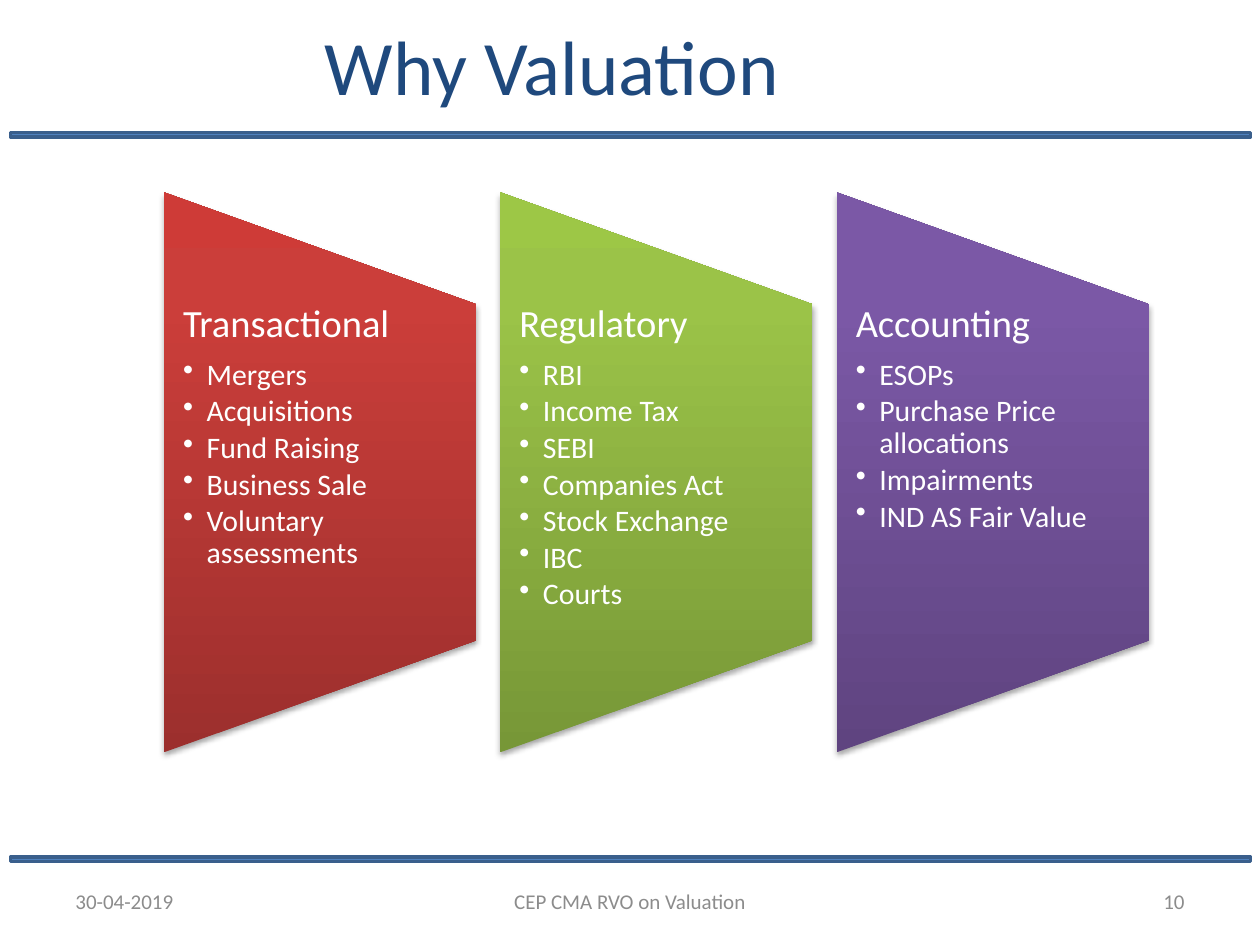
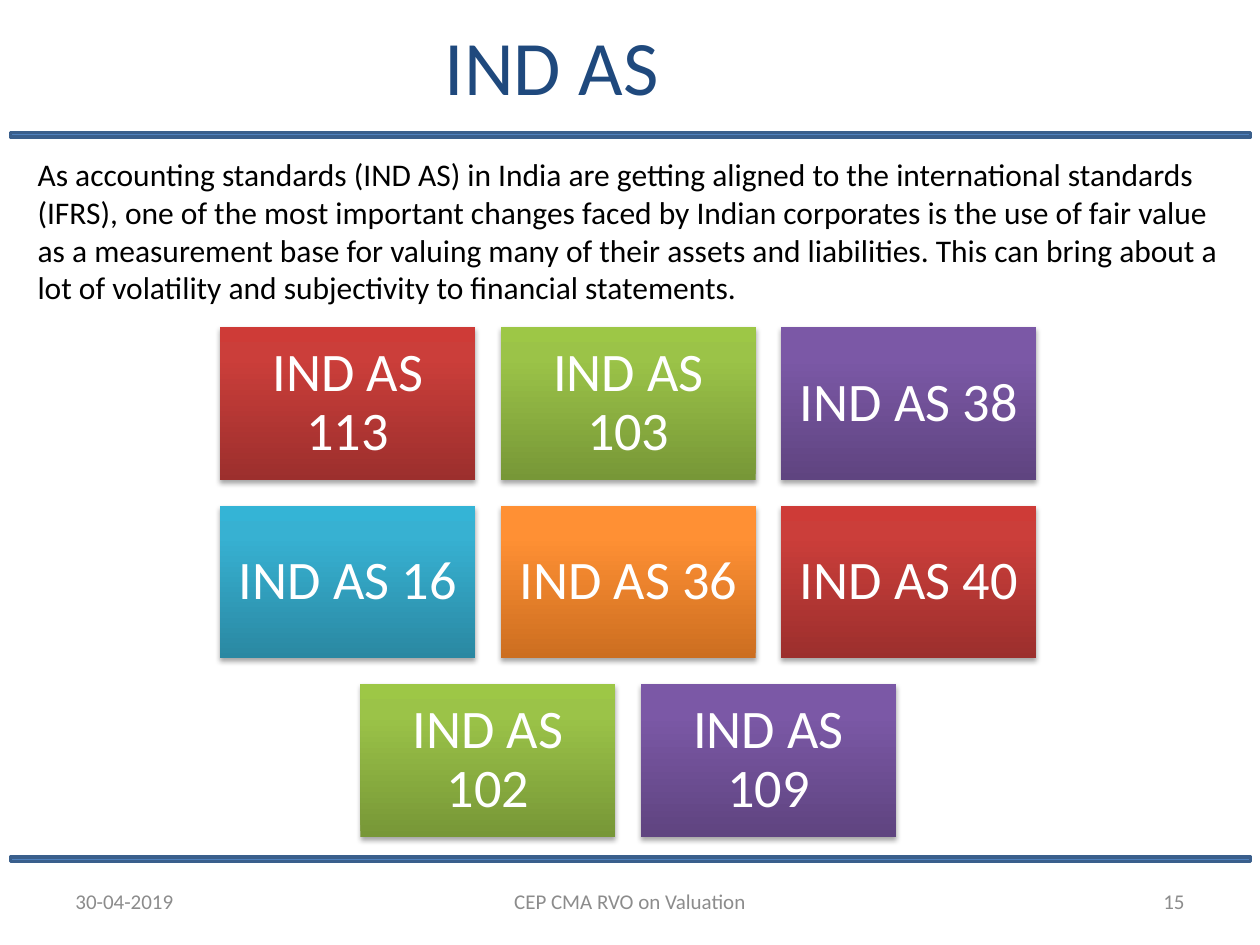
from pptx import Presentation
from pptx.dml.color import RGBColor
from pptx.enum import shapes, text
from pptx.oxml import parse_xml
from pptx.oxml.ns import nsdecls, qn
from pptx.util import Pt

# Shared look
FONT = "Calibri"
COLOURS = {"title": "1F497D", "band": "4F81BD", "band_edge": "3A5F8C",
           "footer": "8C8C8C", "body": "000000", "light": "FFFFFF"}
GRADIENTS = {  # bottom, 80 % of the way up, top
    "red": ("9C2F2D", "CB3E3A", "CE3B37"),
    "green": ("779737", "9BC348", "9DC746"),
    "purple": ("5F4480", "7B58A6", "7C57A8"),
    "teal": ("2A88A2", "37B1D2", "34B4D6"),
    "orange": ("CC6E20", "FF9034", "FF9136"),
}
LEFT, CENTRE, RIGHT = (text.PP_ALIGN.LEFT, text.PP_ALIGN.CENTER,
                       text.PP_ALIGN.RIGHT)
MIDDLE = text.MSO_ANCHOR.MIDDLE

# Content
REASONS = [
    ("Transactional", "red", ["Mergers", "Acquisitions", "Fund Raising",
                              "Business Sale", "Voluntary assessments"]),
    ("Regulatory", "green", ["RBI", "Income Tax", "SEBI", "Companies Act",
                             "Stock Exchange", "IBC", "Courts"]),
    ("Accounting", "purple", ["ESOPs", "Purchase Price allocations",
                              "Impairments", "IND AS Fair Value"]),
]
STANDARDS = [
    [("113", "red"), ("103", "green"), ("38", "purple")],
    [("16", "teal"), ("36", "orange"), ("40", "red")],
    [("102", "green"), ("109", "purple")],
]
INTRO = ("As accounting standards (IND AS) in India are getting aligned to "
         "the international standards (IFRS), one of the most important "
         "changes faced by Indian corporates is the use of fair value as a "
         "measurement base for valuing many of their assets and liabilities. "
         "This can bring about a lot of volatility and subjectivity to "
         "financial statements.")


def box(*lengths):
    return [Pt(length) for length in lengths]


def apply(target, formats):
    for name, value in formats.items():
        setattr(target, name, value)


def rgb(name):
    return RGBColor.from_string(COLOURS[name])


def write(paragraph, words, size, colour, **formats):
    apply(paragraph, formats)
    run = paragraph.add_run()
    run.text = words
    apply(run.font, {"name": FONT, "size": Pt(size)})
    run.font.color.rgb = rgb(colour)


def set_frame(frame, inset_x=7.2, inset_y=3.6, **formats):
    apply(frame, {"word_wrap": True,
                  "margin_left": Pt(inset_x), "margin_right": Pt(inset_x),
                  "margin_top": Pt(inset_y), "margin_bottom": Pt(inset_y),
                  **formats})
    return frame


def add_text(slide, place, **formats):
    return set_frame(slide.shapes.add_textbox(*box(*place)).text_frame, **formats)


def add_bullet(paragraph):
    properties = paragraph._p.get_or_add_pPr()
    apply_indent = {"marL": Pt(13.5), "indent": -Pt(13.5)}
    for name, value in apply_indent.items():
        properties.set(name, str(int(value)))
    properties.append(parse_xml(f'<a:buChar {nsdecls("a")} char="•"/>'))


def add_glossy(slide, preset, place, gradient):
    """Borderless shape with a vertical gradient and a soft shadow below."""
    shape = slide.shapes.add_shape(preset, *box(*place))
    shape.line.fill.background()
    shape.shadow.inherit = False
    stops = "".join(
        f'<a:gs pos="{pos}"><a:srgbClr val="{colour}"/></a:gs>'
        for pos, colour in zip((0, 80000, 100000), GRADIENTS[gradient]))
    properties = shape._element.spPr
    properties.find(qn("a:prstGeom")).addnext(parse_xml(
        f'<a:gradFill {nsdecls("a")} rotWithShape="0"><a:gsLst>{stops}</a:gsLst>'
        '<a:lin ang="16200000" scaled="0"/></a:gradFill>'))
    properties.find(qn("a:effectLst")).append(parse_xml(
        f'<a:outerShdw {nsdecls("a")} blurRad="{Pt(3.1)}" dist="{Pt(1.8)}" '
        'dir="5400000" rotWithShape="0"><a:srgbClr val="000000">'
        '<a:alpha val="35000"/></a:srgbClr></a:outerShdw>'))
    return shape


def add_band(slide, top):
    band = slide.shapes.add_shape(shapes.MSO_SHAPE.MATH_MINUS,
                                  *box(-121.7, top, 964, 11.5))
    band.shadow.inherit = False
    band.fill.solid()
    band.fill.fore_color.rgb = rgb("band")
    band.line.color.rgb = rgb("band_edge")
    band.line.width = Pt(2)


def add_page(deck, heading, number):
    """Slide with title, two bands and the footer line."""
    slide = deck.slides.add_slide(deck.slide_layouts[5])
    title = slide.shapes.title
    apply(title, dict(zip(("left", "top", "width", "height"),
                          box(-8.6, 3.6, 648, 67))))
    title.text_frame.vertical_anchor = MIDDLE
    write(title.text_frame.paragraphs[0], heading, 44, "title", alignment=CENTRE)
    for top in (485.3, 71.3):
        add_band(slide, top)
    for words, left, width, side in (
            ("30-04-2019", 36, 168, LEFT),
            ("CEP CMA RVO on Valuation", 246, 228, CENTRE),
            (number, 516, 168, RIGHT)):
        frame = add_text(slide, (left, 500.5, width, 28.75), vertical_anchor=MIDDLE)
        write(frame.paragraphs[0], words, 12, "footer", alignment=side)
    return slide


def add_reason(slide, left, heading, gradient, examples):
    # The panel is drawn lying down, then turned about its centre
    length, width, middle = 320, 178.6, 269.9
    panel = add_glossy(slide, shapes.MSO_SHAPE.FLOWCHART_MANUAL_OPERATION,
                       (left + (width - length) / 2, middle - width / 2,
                        length, width), gradient)
    panel.rotation = 270
    frame = add_text(slide, (left, 174, width, 192), inset_x=11, inset_y=0)
    write(frame.paragraphs[0], heading, 22, "light",
          line_spacing=0.9, space_after=Pt(7.7))
    for example in examples:
        paragraph = frame.add_paragraph()
        add_bullet(paragraph)
        write(paragraph, example, 17, "light", level=1,
              line_spacing=0.9, space_after=Pt(2.55))


def add_standards(slide):
    width, height, gap, centre, top = 145.7, 87.3, 14.6, 359, 187
    for row, standards in enumerate(STANDARDS):
        count = len(standards)
        start = centre - (count * width + (count - 1) * gap) / 2
        for column, (number, gradient) in enumerate(standards):
            tile = add_glossy(slide, shapes.MSO_SHAPE.RECTANGLE,
                              (start + column * (width + gap),
                               top + row * (height + gap), width, height),
                              gradient)
            frame = set_frame(tile.text_frame, 9.3, 9.3, vertical_anchor=MIDDLE)
            write(frame.paragraphs[0], f"IND AS {number}", 31, "light",
                  alignment=CENTRE, line_spacing=0.9, space_after=Pt(10.85))


def main():
    deck = Presentation()
    deck.slide_width, deck.slide_height = box(720, 540)

    # Reasons for valuation
    why = add_page(deck, "Why Valuation", "10")
    for index, reason in enumerate(REASONS):
        add_reason(why, 93.6 + index * 192.2, *reason)

    # Accounting standards
    ind_as = add_page(deck, "IND AS", "15")
    intro = add_text(ind_as, (14.4, 85, 690, 94.5))
    write(intro.paragraphs[0], INTRO, 18, "body")
    add_standards(ind_as)

    deck.save("out.pptx")


if __name__ == "__main__":
    main()
